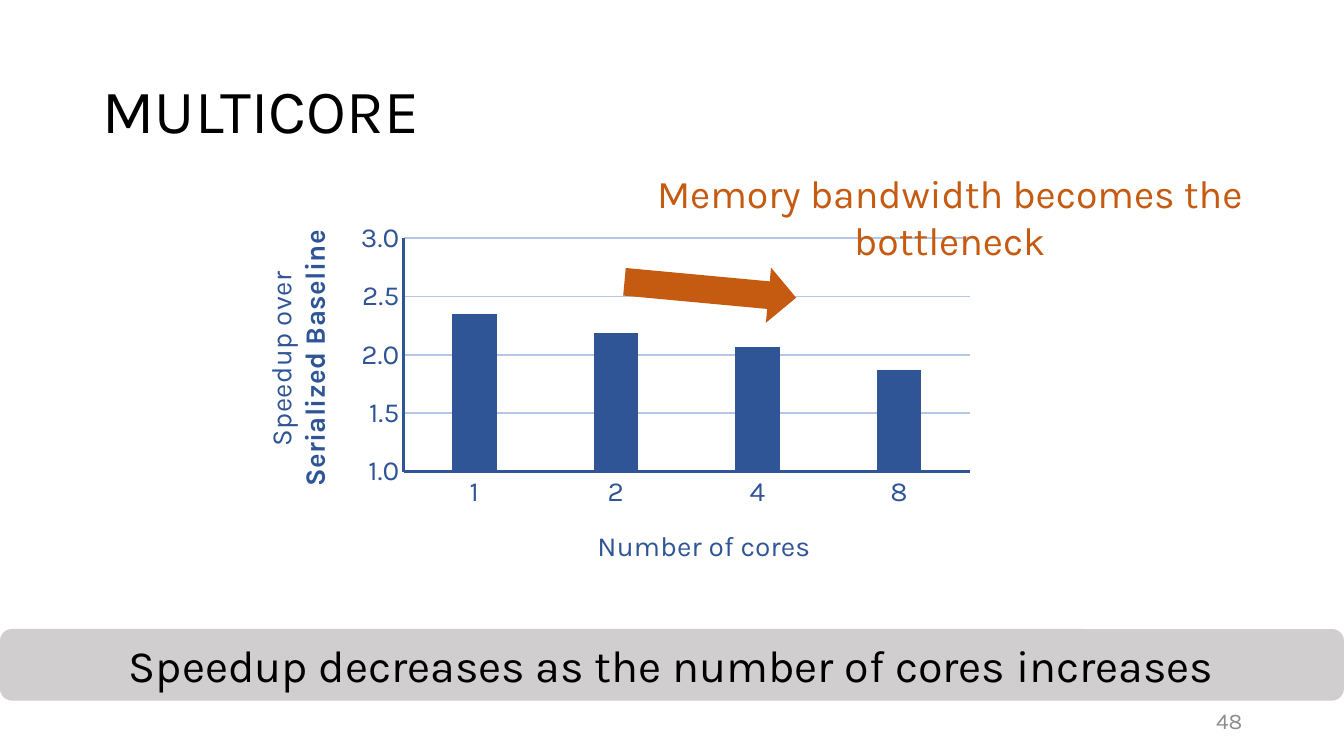
"""Build the slide on multicore speedup over a serialized baseline."""
from dataclasses import dataclass
from typing import Any

import lxml.etree
import pptx
import pptx.chart.data
import pptx.dml.color
import pptx.enum.chart
import pptx.enum.shapes
import pptx.enum.text
import pptx.oxml.ns
import pptx.util

Inches = pptx.util.Inches
Align = pptx.enum.text.PP_ALIGN
Anchor = pptx.enum.text.MSO_ANCHOR
Shape = pptx.enum.shapes.MSO_SHAPE
Tick = pptx.enum.chart.XL_TICK_MARK
FACE = "Karla"
NAVY, PALE, RUST, BLACK = "2F5597", "B4C7E7", "C55A11", "000000"


@dataclass
class Label:
    """Text with its box, look and placing."""
    text: str
    box: tuple[float, float, float, float]
    size: int
    color: str = BLACK
    align: Any = Align.CENTER
    anchor: Any = Anchor.MIDDLE
    gap: float = 1.0


@dataclass
class Block:
    """Filled preset shape."""
    kind: Any
    box: tuple[float, float, float, float]
    color: str
    turn: float = 0


@dataclass
class Scale:
    """Chart axis with its title lines, title place and settings."""
    axis: Any
    lines: list[tuple[str, bool]]
    place: tuple[float, float]
    form: dict[str, Any]


BLOCKS = [
    Block(Shape.ROUNDED_RECTANGLE, (0, 6.24, 13.33, 0.71), "D0CECE"),
    Block(Shape.RIGHT_ARROW, (6.19, 2.6, 1.71, 0.55), RUST, 5.3),
]
LABELS = [
    Label("48", (9.42, 6.95, 3, 0.4), 16, "8C8C8C", Align.RIGHT),
    Label("MULTICORE", (0.92, 0.4, 11.5, 1.45), 44, align=Align.LEFT, gap=0.9),
    Label("Speedup decreases as the number of cores increases",
          BLOCKS[0].box, 32),
    Label("Memory bandwidth becomes the bottleneck", (5.62, 1.63, 7.6, 0.57),
          28, RUST, anchor=Anchor.TOP),
]


def tint(color: str) -> pptx.dml.color.RGBColor:
    """Turn a hex string into a colour."""
    return pptx.dml.color.RGBColor.from_string(color)


def apply(item: Any, form: dict[str, Any]) -> None:
    """Set each attribute named in a dict."""
    for name, value in form.items():
        setattr(item, name, value)


def style(font: Any, size: int, color: str, bold: bool = False) -> None:
    """Set the look of a font."""
    apply(font, {"name": FACE, "size": pptx.util.Pt(size), "bold": bold})
    font.color.rgb = tint(color)


def stroke(line: Any, color: str, width: float) -> None:
    """Set the colour and width of a line."""
    line.color.rgb = tint(color)
    line.width = pptx.util.Pt(width)


def place(node: Any, index: int, spots: dict[str, Any]) -> None:
    """Give a chart part a manual layout."""
    tag = pptx.oxml.ns.qn
    for old in node.findall(tag("c:layout")):
        node.remove(old)
    outer = lxml.etree.Element(tag("c:layout"))
    inner = lxml.etree.SubElement(outer, tag("c:manualLayout"))
    for name, value in spots.items():
        lxml.etree.SubElement(inner, tag(f"c:{name}")).set("val", str(value))
    node.insert(index, outer)


def draw_block(slide: Any, block: Block) -> None:
    """Draw a filled shape."""
    shape = slide.shapes.add_shape(block.kind, *map(Inches, block.box))
    shape.shadow.inherit = False
    shape.fill.solid()
    shape.fill.fore_color.rgb = tint(block.color)
    shape.line.fill.background()
    shape.rotation = block.turn


def draw_label(slide: Any, label: Label) -> None:
    """Draw a text box."""
    frame = slide.shapes.add_textbox(*map(Inches, label.box)).text_frame
    apply(frame, {"word_wrap": True, "vertical_anchor": label.anchor})
    para = frame.paragraphs[0]
    apply(para, {"text": label.text, "alignment": label.align,
                 "line_spacing": label.gap})
    style(para.runs[0].font, label.size, label.color)


def draw_scale(scale: Scale) -> None:
    """Style an axis and write its title."""
    axis = scale.axis
    apply(axis, {"major_tick_mark": Tick.NONE, "minor_tick_mark": Tick.NONE,
                 **scale.form})
    style(axis.tick_labels.font, 20, NAVY)
    stroke(axis.format.line, NAVY, 2)
    frame = axis.axis_title.text_frame
    for count, (text, bold) in enumerate(scale.lines):
        para = frame.add_paragraph() if count else frame.paragraphs[0]
        para.alignment = Align.CENTER
        run = para.add_run()
        run.text = text
        style(run.font, 20, NAVY, bold)
    left, top = scale.place
    place(axis.axis_title._element, 1,
          {"xMode": "edge", "yMode": "edge", "x": left, "y": top})


def draw_chart(slide: Any) -> None:
    """Draw the speedup columns."""
    data = pptx.chart.data.CategoryChartData()
    data.categories = ["1", "2", "4", "8"]
    data.add_series("Series 1", [2.35, 2.19, 2.07, 1.87])
    kind = pptx.enum.chart.XL_CHART_TYPE.COLUMN_CLUSTERED
    box = map(Inches, (2.43, 2, 7.49, 3.68))
    chart = slide.shapes.add_chart(kind, *box, data).chart
    apply(chart, {"has_legend": False, "has_title": False})
    style(chart.font, 10, BLACK)
    plot = chart.plots[0]
    apply(plot, {"gap_width": 219, "overlap": -27, "vary_by_categories": False})
    fill = plot.series[0].format.fill
    fill.solid()
    fill.fore_color.rgb = tint(NAVY)
    cores, speed = chart.category_axis, chart.value_axis
    draw_scale(Scale(cores, [("Number of cores", False)], (0.46, 0.88), {}))
    draw_scale(Scale(
        speed, [("Speedup over", False), ("Serialized Baseline", True)],
        (0.02, 0.08), {"minimum_scale": 1, "maximum_scale": 3,
                       "major_unit": 0.5, "has_major_gridlines": True}))
    apply(speed.tick_labels, {"number_format": "#,##0.0",
                              "number_format_is_linked": False})
    stroke(speed.major_gridlines.format.line, PALE, 1.2)
    body = speed.axis_title._element.xpath(".//a:bodyPr")[0]
    body.set("rot", "-5400000")
    body.set("vert", "horz")
    place(chart._chartSpace.xpath(".//c:plotArea")[0], 0,
          {"layoutTarget": "inner", "xMode": "edge", "yMode": "edge",
           "x": 0.21, "y": 0.1, "w": 0.75, "h": 0.64})


def main() -> None:
    """Build and save the slide."""
    deck = pptx.Presentation()
    apply(deck, {"slide_width": Inches(13.33), "slide_height": Inches(7.5)})
    slide = deck.slides.add_slide(deck.slide_layouts[6])
    draw_chart(slide)
    for block in BLOCKS:
        draw_block(slide, block)
    for label in LABELS:
        draw_label(slide, label)
    deck.save("out.pptx")


if __name__ == "__main__":
    main()
